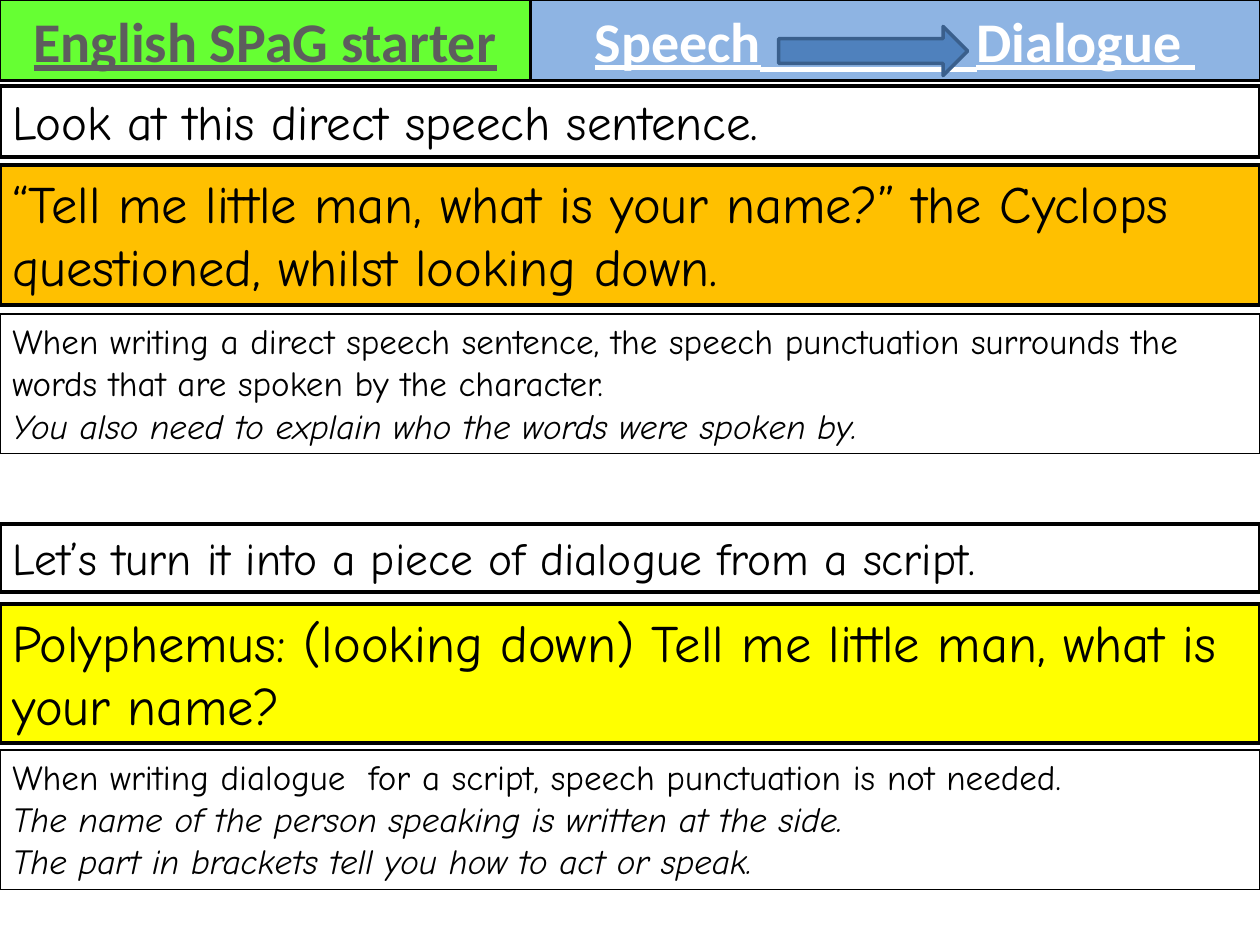
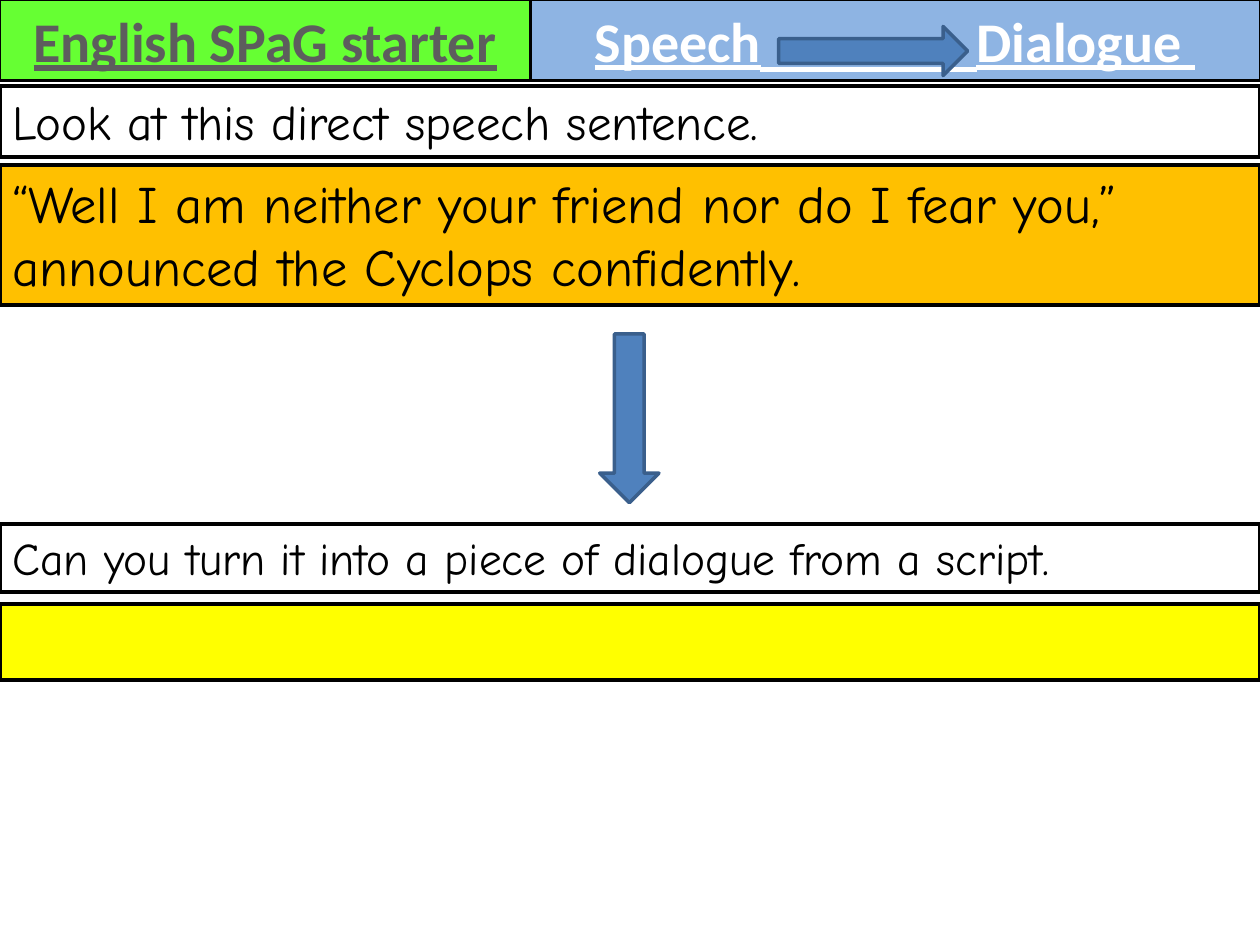
from dataclasses import dataclass

from lxml import etree
from pptx import Presentation
from pptx.dml.color import RGBColor
from pptx.enum import shapes, text
from pptx.oxml.ns import qn
from pptx.util import Inches, Pt


@dataclass(frozen=True)
class Theme:
    heading_font: str = "Calibri"
    body_font: str = "Comic Neue"
    black: str = "000000"
    white: str = "FFFFFF"
    heading_grey: str = "5D5D5D"
    green: str = "66FF33"
    sky: str = "8EB4E3"
    orange: str = "FFC000"
    yellow: str = "FFFF00"
    arrow_fill: str = "4F81BD"
    arrow_line: str = "3A5F8C"
    heading_size: int = 32
    example_size: int = 30
    prompt_size: int = 28
    task_size: int = 26
    note_size: int = 20
    heavy_line: float = 2.25
    heading_line: float = 1.5
    note_line: float = 1
    arrow_weight: float = 2
    underline_weight: float = 3


THEME = Theme()
PAGE_WIDTH = 10
HEADING_SPLIT = 4.21
HEADING_HEIGHT = 0.64
TALL = 1.11


def place(shape, left, top, width, height):
    frame = dict(left=left, top=top, width=width, height=height)
    for name, value in frame.items():
        setattr(shape, name, Inches(value))


def paint(shape, fill, line, weight):
    if fill:
        shape.fill.solid()
        shape.fill.fore_color.rgb = RGBColor.from_string(fill)
    else:
        shape.fill.background()
    shape.line.color.rgb = RGBColor.from_string(line)
    shape.line.width = Pt(weight)


def write(box, lines, size, font=THEME.body_font, color=THEME.black,
          align=text.PP_ALIGN.LEFT, italic_from=None, **styles):
    frame = box.text_frame
    layout = dict(word_wrap=True, vertical_anchor=text.MSO_ANCHOR.TOP,
                  auto_size=text.MSO_AUTO_SIZE.NONE)
    for name, value in layout.items():
        setattr(frame, name, value)
    for index, line in enumerate(lines):
        para = frame.paragraphs[0] if index == 0 else frame.add_paragraph()
        para.alignment = align
        span = para.add_run()
        span.text = line
        span.font.color.rgb = RGBColor.from_string(color)
        italic = italic_from is not None and index >= italic_from
        format_values = dict(name=font, size=Pt(size), italic=italic, **styles)
        for name, value in format_values.items():
            setattr(span.font, name, value)


def add_tab_stop(para, position):
    tabs = etree.SubElement(para._p.get_or_add_pPr(), qn("a:tabLst"))
    etree.SubElement(tabs, qn("a:tab"), pos=str(Inches(position)), algn="l")


def add_rule(page, left, right, top):
    rule = page.shapes.add_connector(shapes.MSO_CONNECTOR.STRAIGHT,
                                     *map(Inches, (left, top, right, top)))
    rule.line.color.rgb = RGBColor.from_string(THEME.white)
    rule.line.width = Pt(THEME.underline_weight)
    etree.SubElement(rule._element.spPr, qn("a:effectLst"))


def add_band(page, top, height, lines=(), size=THEME.example_size, fill=None,
             weight=THEME.heavy_line, italic_from=None):
    box = page.shapes.add_textbox(0, Inches(top), Inches(PAGE_WIDTH), Inches(height))
    paint(box, fill, THEME.black, weight)
    if lines:
        write(box, lines, size, italic_from=italic_from)


def add_note(page, top, lines):
    add_band(page, top, TALL, lines, THEME.note_size, weight=THEME.note_line, italic_from=1)


def add_arrow(page, kind, left, top, width, height):
    arrow = page.shapes.add_shape(kind, *map(Inches, (left, top, width, height)))
    arrow.shadow.inherit = False
    paint(arrow, THEME.arrow_fill, THEME.arrow_line, THEME.arrow_weight)


def add_heading(page):
    heading = dict(size=THEME.heading_size, font=THEME.heading_font,
                   bold=True, underline=True)
    title = page.shapes.title
    place(title, 0, 0, HEADING_SPLIT, HEADING_HEIGHT)
    paint(title, THEME.green, THEME.black, THEME.heading_line)
    write(title, ["English SPaG starter"], color=THEME.heading_grey,
          align=text.PP_ALIGN.CENTER, **heading)

    topic = page.shapes.add_textbox(Inches(HEADING_SPLIT), 0,
                                    Inches(PAGE_WIDTH - HEADING_SPLIT),
                                    Inches(HEADING_HEIGHT))
    paint(topic, THEME.sky, THEME.black, THEME.heading_line)
    write(topic, ["Speech\tDialogue "], color=THEME.white, **heading)
    topic.text_frame.margin_left = Inches(0.51)
    add_tab_stop(topic.text_frame.paragraphs[0], 3.03)
    add_rule(page, 6.03, 7.75, 0.55)
    add_arrow(page, shapes.MSO_SHAPE.RIGHT_ARROW, 6.18, 0.21, 1.5, 0.39)


def add_exercise(deck, sentence, task, script_lines=(), script_height=TALL):
    page = deck.slides.add_slide(deck.slide_layouts[5])
    add_heading(page)
    add_band(page, 0.68, 0.57, ["Look at this direct speech sentence."], THEME.prompt_size)
    add_band(page, 1.31, TALL, [sentence], fill=THEME.orange)
    add_band(page, 4.16, 0.54, [task], THEME.task_size)
    add_band(page, 4.79, script_height, script_lines, fill=THEME.yellow)
    return page


def main():
    deck = Presentation()
    deck.slide_width = Inches(PAGE_WIDTH)
    deck.slide_height = Inches(7.5)

    worked = add_exercise(
        deck,
        "“Tell me little man, what is your name?” the Cyclops questioned, whilst looking down.",
        "Let’s turn it into a piece of dialogue from a script.",
        ["Polyphemus: (looking down) Tell me little man, what is your name?"])
    add_note(worked, 2.49, [
        "When writing a direct speech sentence, the speech punctuation surrounds "
        "the words that are spoken by the character.",
        "You also need to explain who the words were spoken by."])
    add_note(worked, 5.95, [
        "When writing dialogue  for a script, speech punctuation is not needed.",
        "The name of the person speaking is written at the side.",
        "The part in brackets tell you how to act or speak."])

    practice = add_exercise(
        deck,
        "“Well I am neither your friend nor do I fear you,” announced the Cyclops confidently.",
        "Can you turn it into a piece of dialogue from a script.",
        script_height=0.61)
    add_arrow(practice, shapes.MSO_SHAPE.DOWN_ARROW, 4.76, 2.65, 0.47, 1.34)

    deck.save("out.pptx")


if __name__ == "__main__":
    main()
